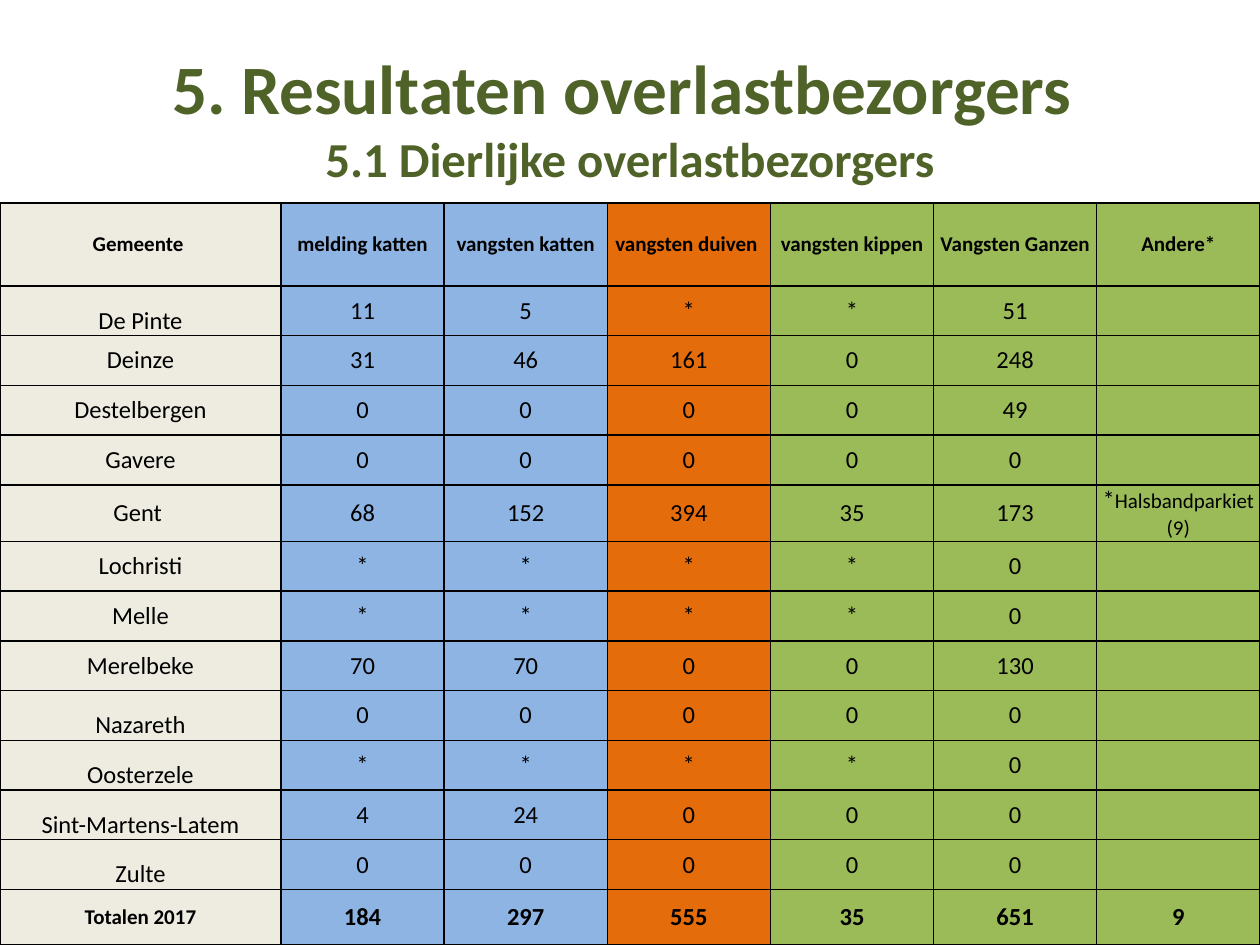
import dataclasses
import pptx
import pptx.util
import pptx.dml.color
import pptx.enum.text
import pptx.oxml
import pptx.oxml.ns

MID = pptx.enum.text.MSO_ANCHOR.MIDDLE
LOW = pptx.enum.text.MSO_ANCHOR.BOTTOM
MARK = "*"


@dataclasses.dataclass
class Theme:
    font: str = "Calibri"
    title: str = "4F6228"
    ink: str = "000000"
    sand: str = "EEECE1"
    blue: str = "8EB4E3"
    orange: str = "E46C0A"
    green: str = "9BBB59"
    big: float = 39.6
    sub: float = 27.9
    body: float = 14
    small: float = 12
    line: float = 1


class Page:
    cols, rows = 40, 30

    def __init__(self, deck, theme):
        self.deck, self.theme = deck, theme
        self.slide = deck.slides.add_slide(deck.slide_layouts[6])

    def wide(self, n):
        return round(self.deck.slide_width * n / self.cols)

    def tall(self, n):
        return round(self.deck.slide_height * n / self.rows)

    def box(self, x, y, w, h):
        return self.wide(x), self.tall(y), self.wide(w), self.tall(h)

    def style(self, run, size, color, bold):
        run.font.name = self.theme.font
        run.font.size = pptx.util.Pt(size)
        run.font.bold = bold
        run.font.color.rgb = pptx.dml.color.RGBColor.from_string(color)

    def title(self, area, text):
        frame = self.slide.shapes.add_textbox(*self.box(*area)).text_frame
        frame.word_wrap = True
        frame.vertical_anchor = MID
        frame.text = text
        para = frame.paragraphs[0]
        para.alignment = pptx.enum.text.PP_ALIGN.CENTER
        for run, size in zip(para.runs, (self.theme.big, self.theme.sub)):
            self.style(run, size, self.theme.title, True)

    def border(self, cell):
        props = cell._tc.get_or_add_tcPr()
        width = pptx.util.Pt(self.theme.line)
        for side in "LRTB":
            props.append(pptx.oxml.parse_xml(
                f'<a:ln{side} {pptx.oxml.ns.nsdecls("a")} w="{width}"><a:solidFill>'
                f'<a:srgbClr val="{self.theme.ink}"/></a:solidFill></a:ln{side}>'))

    def cell(self, cell, parts, fill, bold, anchor, inset):
        self.border(cell)
        cell.fill.solid()
        cell.fill.fore_color.rgb = pptx.dml.color.RGBColor.from_string(fill)
        cell.vertical_anchor = anchor
        cell.margin_left = cell.margin_right = pptx.util.Inches(inset)
        cell.margin_top = cell.margin_bottom = 0
        para = cell.text_frame.paragraphs[0]
        para.alignment = pptx.enum.text.PP_ALIGN.CENTER
        for text, size in parts:
            run = para.add_run()
            run.text = text
            self.style(run, size, self.theme.ink, bold)

    def table(self, area, data, first, heights, fills, low):
        x, y, w, h = area
        last = len(data) - 1
        count = len(fills)
        table = self.slide.shapes.add_table(len(data), count, *self.box(*area)).table
        table.first_row = table.horz_banding = False
        for i, col in enumerate(table.columns):
            col.width = self.wide(first if i == 0 else (w - first) / (count - 1))
        plain = (h - sum(heights.values())) / (len(data) - len(heights))
        for r, line in enumerate(data):
            table.rows[r].height = self.tall(heights.get(r, plain))
            edge = r in (0, last)
            for c, value in enumerate(line):
                head = r == 0 or (r == last and c == 0)
                size = self.theme.small if head else self.theme.body
                parts = value if isinstance(value, list) else [(value, size)] if value else []
                anchor = LOW if c == 0 and value in low else MID
                self.cell(table.cell(r, c), parts, fills[c], edge, anchor, 0.03 if edge else 0.01)


def main():
    theme = Theme()
    deck = pptx.Presentation()
    deck.slide_width = pptx.util.Inches(10)
    deck.slide_height = pptx.util.Inches(7.5)
    page = Page(deck, theme)
    page.title((2, 1.2, 36, 5), "5. Resultaten overlastbezorgers \v5.1 Dierlijke overlastbezorgers")
    other = [(MARK, theme.body), ("Halsbandparkiet (9)", theme.small)]
    data = [
        ["Gemeente ", "melding katten", "vangsten katten", "vangsten duiven ",
         "vangsten kippen", "Vangsten Ganzen", "Andere*"],
        ["De Pinte", "11", "5", MARK, MARK, "51", ""],
        ["Deinze", "31", "46", "161", "0", "248", ""],
        ["Destelbergen", "0", "0", "0", "0", "49", ""],
        ["Gavere", "0", "0", "0", "0", "0", ""],
        ["Gent ", "68", "152", "394", "35", "173", other],
        ["Lochristi", MARK, MARK, MARK, MARK, "0", ""],
        ["Melle", MARK, MARK, MARK, MARK, "0", ""],
        ["Merelbeke", "70", "70", "0", "0", "130", ""],
        ["Nazareth", "0", "0", "0", "0", "0", ""],
        ["Oosterzele", MARK, MARK, MARK, MARK, "0", ""],
        ["Sint-Martens-Latem", "4", "24", "0", "0", "0", ""],
        ["Zulte", "0", "0", "0", "0", "0", ""],
        ["Totalen 2017", "184", "297", "555", "35", "651", "9"],
    ]
    fills = [theme.sand] + [theme.blue] * 2 + [theme.orange] + [theme.green] * 3
    low = {"De Pinte", "Nazareth", "Oosterzele", "Sint-Martens-Latem", "Zulte"}
    page.table((0, 6.44, 40, 23.56), data, 8.92, {0: 2.64, 5: 1.8, 13: 1.76}, fills, low)
    deck.save("out.pptx")


if __name__ == "__main__":
    main()
